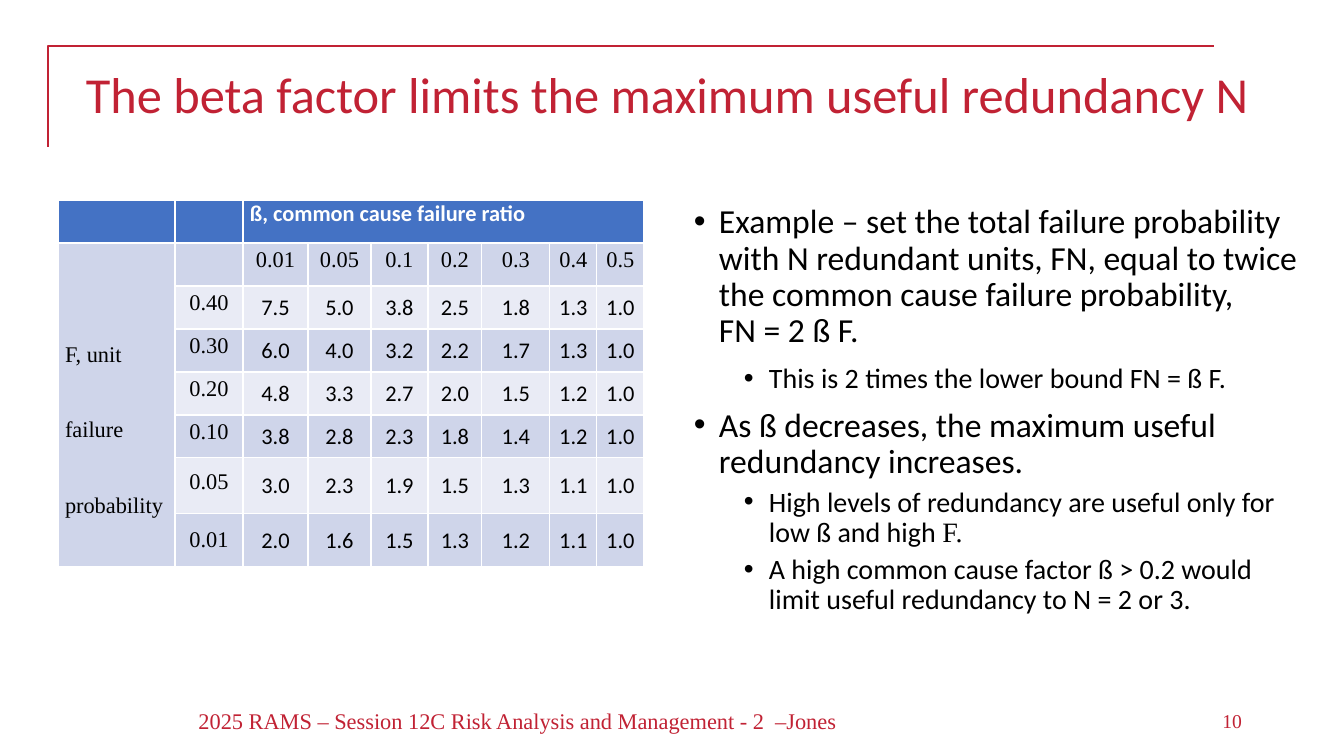
from dataclasses import dataclass

from lxml import etree
from pptx import Presentation
from pptx.dml.color import RGBColor
from pptx.enum.text import MSO_ANCHOR, PP_ALIGN
from pptx.oxml.ns import qn
from pptx.util import Emu, Pt

LEFT, CENTER, RIGHT, JUSTIFY = PP_ALIGN.LEFT, PP_ALIGN.CENTER, PP_ALIGN.RIGHT, PP_ALIGN.JUSTIFY
TOP, MIDDLE = MSO_ANCHOR.TOP, MSO_ANCHOR.MIDDLE

TITLE = "The beta factor limits the maximum useful redundancy N"
FOOTER = "2025 RAMS – Session 12C Risk Analysis and Management - 2  –Jones"
PAGE_NUMBER = "10"

# (level, space before in points, [(text, is_serif), ...])
BULLETS = [
    (0, 0, [("Example – set the total failure probability with N redundant units, FN, "
             "equal to twice the common cause failure probability,\vFN = 2 ß F.", False)]),
    (1, 10, [("This is 2 times the lower bound FN = ß F.", False)]),
    (0, 10, [("As ß decreases, the maximum useful redundancy increases.", False)]),
    (1, 5, [("High levels of redundancy are useful only for low ß and high ", False),
            ("F.", True)]),
    (1, 5, [("A high common cause factor ß > 0.2 would limit useful redundancy "
             "to N = 2 or 3.", False)]),
]

BETA_HEADING = "ß, common cause failure ratio"
UNIT_HEADING = ["F, unit", "failure", "probability"]
BETAS = ["0.01", "0.05", "0.1", "0.2", "0.3", "0.4", "0.5"]
MAX_REDUNDANCY = {
    "0.40": ["7.5", "5.0", "3.8", "2.5", "1.8", "1.3", "1.0"],
    "0.30": ["6.0", "4.0", "3.2", "2.2", "1.7", "1.3", "1.0"],
    "0.20": ["4.8", "3.3", "2.7", "2.0", "1.5", "1.2", "1.0"],
    "0.10": ["3.8", "2.8", "2.3", "1.8", "1.4", "1.2", "1.0"],
    "0.05": ["3.0", "2.3", "1.9", "1.5", "1.3", "1.1", "1.0"],
    "0.01": ["2.0", "1.6", "1.5", "1.3", "1.2", "1.1", "1.0"],
}
COLUMN_WIDTHS = [117, 68, 65, 63, 57, 54, 68, 47, 47]
ROW_HEIGHTS = [43] * 6 + [56, 53]


@dataclass(frozen=True)
class Theme:
    sans: str = "Calibri"
    serif: str = "Times New Roman"
    red: str = "C12234"
    black: str = "000000"
    white: str = "FFFFFF"
    header_fill: str = "4472C4"
    bands: tuple = ("E9EBF5", "CFD5EA")
    title_size: int = 36
    bullet_sizes: tuple = (24, 20)
    table_size: int = 16
    footer_size: int = 16
    page_size: int = 14


THEME = Theme()


def px(length):
    return Emu(round(length * 914400 / 100.8))


def style_font(font, name, size, color, bold=False):
    font.name, font.size, font.bold = name, Pt(size), bold
    font.color.rgb = RGBColor.from_string(color)


def add_frame(slide, left, top, width, height, anchor=TOP):
    frame = slide.shapes.add_textbox(px(left), px(top), px(width), px(height)).text_frame
    frame.word_wrap = True
    frame.vertical_anchor = anchor
    return frame


def add_label(slide, box, text, name, size, align, anchor, line_spacing=1.0):
    paragraph = add_frame(slide, *box, anchor).paragraphs[0]
    paragraph.text = text
    paragraph.alignment = align
    paragraph.line_spacing = line_spacing
    style_font(paragraph.font, name, size, THEME.red)


def add_corner_rule(slide):
    builder = slide.shapes.build_freeform(px(48), px(147), 1.0)
    builder.add_line_segments([(px(48), px(46)), (px(1214), px(46))], close=False)
    rule = builder.convert_to_shape()
    rule.shadow.inherit = False
    rule.fill.background()
    rule.line.color.rgb = RGBColor.from_string(THEME.red)
    rule.line.width = Pt(2)


def add_bullets(slide):
    frame = add_frame(slide, 684, 200, 628, 434)
    for index, (level, space, runs) in enumerate(BULLETS):
        paragraph = frame.add_paragraph() if index else frame.paragraphs[0]
        paragraph.level = level
        paragraph.line_spacing = 0.9
        paragraph.space_before = Pt(space)
        properties = paragraph._p.get_or_add_pPr()
        properties.set("marL", str(px(25 + 50 * level)))
        properties.set("indent", str(-px(25)))
        etree.SubElement(properties, qn("a:buFont")).set("typeface", "Arial")
        etree.SubElement(properties, qn("a:buChar")).set("char", "•")
        size = THEME.bullet_sizes[level]
        style_font(paragraph.font, THEME.sans, size, THEME.black)
        for text, is_serif in runs:
            for part_index, part in enumerate(text.split("\v")):
                if part_index:
                    paragraph.add_line_break()
                run = paragraph.add_run()
                run.text = part
                style_font(run.font, THEME.serif if is_serif else THEME.sans, size, THEME.black)


def fill_cell(cell, lines, name, align, color=THEME.black, bold=False, anchor=MIDDLE, spacing=None):
    cell.vertical_anchor = anchor
    cell.margin_left = cell.margin_right = px(7)
    cell.margin_top = cell.margin_bottom = 0
    cell.text = "\n".join(lines)
    for paragraph in cell.text_frame.paragraphs:
        paragraph.alignment = align
        if spacing:
            paragraph.line_spacing = Pt(spacing)
        style_font(paragraph.font, name, THEME.table_size, color, bold)


def add_redundancy_table(slide):
    table = slide.shapes.add_table(
        len(ROW_HEIGHTS), len(COLUMN_WIDTHS), px(58), px(200),
        px(sum(COLUMN_WIDTHS)), px(sum(ROW_HEIGHTS))).table
    for column, width in zip(table.columns, COLUMN_WIDTHS):
        column.width = px(width)
    for index, (row, height) in enumerate(zip(table.rows, ROW_HEIGHTS)):
        row.height = px(height)
        for cell in row.cells:
            cell.fill.solid()
            color = THEME.bands[index % 2] if index else THEME.header_fill
            cell.fill.fore_color.rgb = RGBColor.from_string(color)

    table.cell(0, 2).merge(table.cell(0, len(COLUMN_WIDTHS) - 1))
    table.cell(1, 0).merge(table.cell(len(ROW_HEIGHTS) - 1, 0))
    fill_cell(table.cell(0, 2), [BETA_HEADING], THEME.sans, JUSTIFY, THEME.white, True, TOP)
    fill_cell(table.cell(1, 0), UNIT_HEADING, THEME.serif, JUSTIFY, spacing=54)
    for column, beta in enumerate(BETAS, 2):
        fill_cell(table.cell(1, column), [beta], THEME.serif, CENTER, spacing=12)
    last_row = len(ROW_HEIGHTS) - 1
    for row, (probability, values) in enumerate(MAX_REDUNDANCY.items(), 2):
        fill_cell(table.cell(row, 1), [probability], THEME.serif, CENTER,
                  spacing=None if row == last_row else 12)
        for column, value in enumerate(values, 2):
            fill_cell(table.cell(row, column), [value], THEME.sans, CENTER)


def main():
    presentation = Presentation()
    presentation.slide_width, presentation.slide_height = px(1344), px(756)
    slide = presentation.slides.add_slide(presentation.slide_layouts[6])
    add_corner_rule(slide)
    add_label(slide, (76, 65, 1191, 95), TITLE, THEME.sans, THEME.title_size, LEFT, TOP, 0.9)
    add_bullets(slide)
    add_label(slide, (112, 701, 811, 40), FOOTER, THEME.serif, THEME.footer_size, CENTER, MIDDLE)
    add_label(slide, (950, 701, 302, 40), PAGE_NUMBER, THEME.serif, THEME.page_size, RIGHT, MIDDLE)
    add_redundancy_table(slide)
    presentation.save("out.pptx")


if __name__ == "__main__":
    main()
